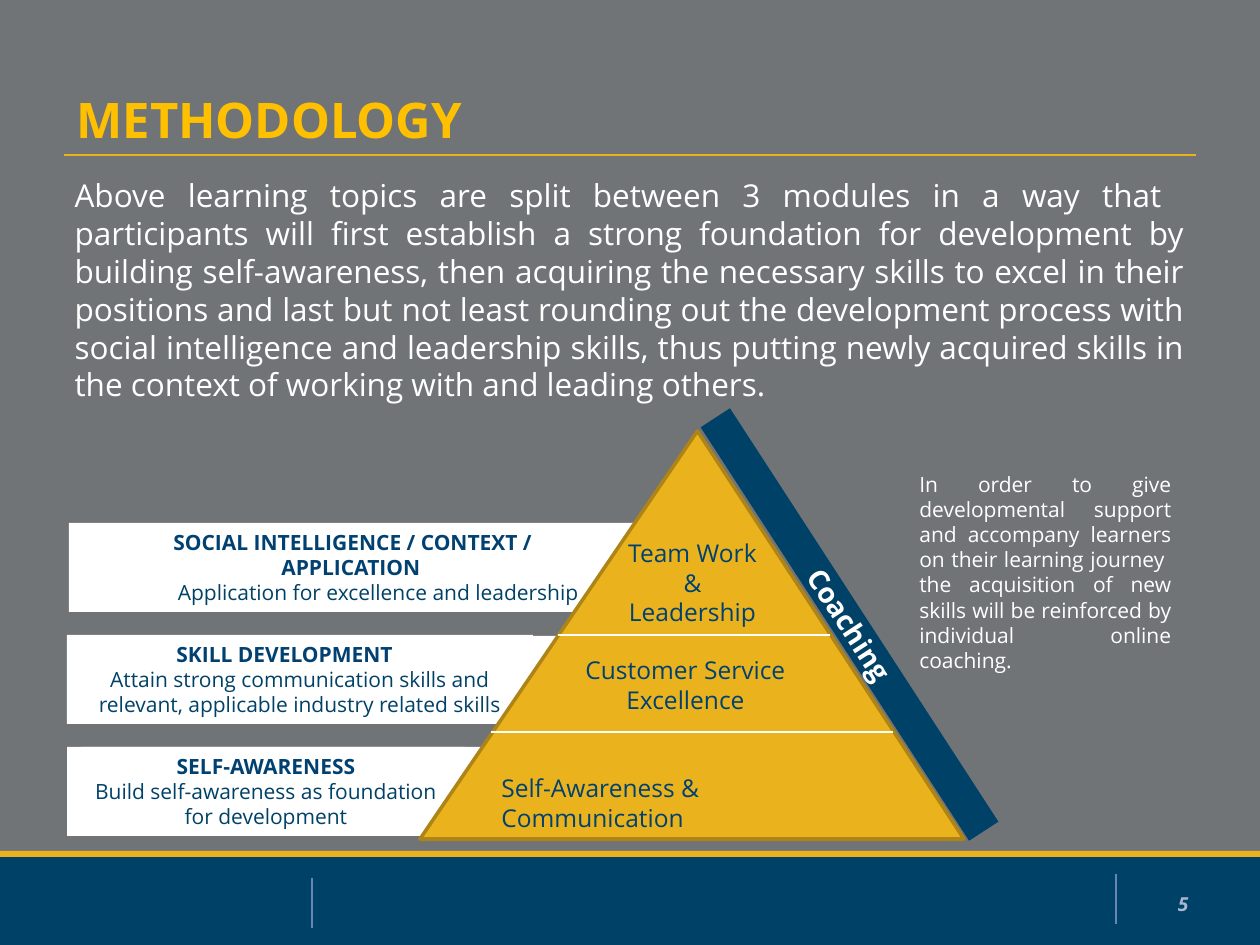
from typing import NamedTuple

from lxml import etree
from pptx import Presentation
from pptx import util as u
from pptx.dml.color import RGBColor
from pptx.enum import shapes, text
from pptx.oxml import ns

PX_PER_INCH = 126
GREY, NAVY, INK, GOLD, WHITE = "717477", "004167", "004171", "EAB31D", "FFFFFF"
AL, ANC, SHP = text.PP_ALIGN, text.MSO_ANCHOR, shapes.MSO_SHAPE


class Box(NamedTuple):
    x: int
    y: int
    w: int
    h: int


class Para(NamedTuple):
    text: str
    size: int
    color: str
    bold: bool = False
    align: AL = AL.LEFT
    indent: int = 0
    italic: bool = False


class Label(NamedTuple):
    box: Box
    paras: list


class Line(NamedTuple):
    x1: int
    y1: int
    x2: int
    y2: int
    color: str


def px(n: int) -> u.Emu:
    return u.Emu(round(n * 914400 / PX_PER_INCH))


def rgb(value: str) -> RGBColor:
    return RGBColor.from_string(value)


def write(sp, paras: list, anchor=ANC.TOP) -> None:
    tf = sp.text_frame
    frame = {"word_wrap": True, "auto_size": text.MSO_AUTO_SIZE.NONE,
             "vertical_anchor": anchor}
    for name, value in frame.items():
        setattr(tf, name, value)
    for i, para in enumerate(paras):
        p = tf.add_paragraph() if i else tf.paragraphs[0]
        pPr = p._p.get_or_add_pPr()
        pPr.set("marL", str(px(para.indent)))
        pPr.set("indent", "0")
        etree.SubElement(pPr, ns.qn("a:buNone"))
        p.alignment, p.space_before = para.align, u.Pt(0)
        r = p.add_run()
        r.text = para.text
        fmt = {"name": "Open Sans", "size": u.Pt(para.size),
               "bold": para.bold, "italic": para.italic}
        for name, value in fmt.items():
            setattr(r.font, name, value)
        r.font.color.rgb = rgb(para.color)


def place(sp, box: Box) -> None:
    for name, value in zip(("left", "top", "width", "height"), box):
        setattr(sp, name, px(value))


def add_shape(s, box: Box, fill: str, kind=SHP.RECTANGLE):
    sp = s.shapes.add_shape(kind, *map(px, box))
    sp.shadow.inherit = False
    sp.fill.solid()
    sp.fill.fore_color.rgb = rgb(fill)
    sp.line.fill.background()
    return sp


def add_text(s, box: Box, paras: list, anchor=ANC.TOP) -> None:
    write(s.shapes.add_textbox(*map(px, box)), paras, anchor)


def add_line(s, line: Line) -> None:
    cx = s.shapes.add_connector(shapes.MSO_CONNECTOR.STRAIGHT, *map(px, line[:4]))
    cx.line.color.rgb = rgb(line.color)
    cx.line.width = u.Pt(0.75)
    etree.SubElement(cx._element.spPr, ns.qn("a:effectLst"))


def heading(words: str, align=AL.LEFT, indent: int = 0) -> Para:
    return Para(words, 12, INK, True, align, indent)


def detail(words: str) -> Para:
    return Para(words, 12, NAVY, align=AL.CENTER)


def level(words: str, align=AL.CENTER) -> Para:
    return Para(words, 14, INK, align=align)


BODY = ("Above learning topics are split between 3 modules in a way that  participants "
        "will first establish a strong foundation for development by building "
        "self-awareness, then acquiring the necessary skills to excel in their positions "
        "and last but not least rounding out the development process with social "
        "intelligence and leadership skills, thus putting newly acquired skills in the "
        "context of working with and leading others.")
SUPPORT = ("In order to give developmental support and accompany learners on their "
           "learning journey  the acquisition of new skills will be reinforced by "
           "individual online coaching.")

FRAME_LINES = [
    Line(312, 878, 312, 928, "6A85B2"),
    Line(1116, 874, 1116, 924, "6A85B2"),
    Line(64, 155, 1196, 155, GOLD),
]
LABEL_BACKS = [Box(81, 747, 466, 38), Box(96, 636, 466, 38)]
LABELS = [
    Label(Box(67, 635, 466, 89), [
        heading("SKILL DEVELOPMENT", indent=97),
        detail("Attain strong communication skills and relevant, "
               "applicable industry related skills")]),
    Label(Box(67, 747, 398, 89), [
        heading("SELF-AWARENESS", AL.CENTER),
        detail("Build self-awareness as foundation for development")]),
    Label(Box(69, 523, 619, 89), [
        heading("SOCIAL INTELLIGENCE / CONTEXT /", indent=92),
        heading("APPLICATION", indent=200),
        detail("Application for excellence and leadership")]),
]
LEVELS = [
    Label(Box(499, 532, 387, 102),
          [level("Team Work"), level("&"), level("Leadership")]),
    Label(Box(548, 649, 275, 72),
          [level("Customer Service"), level("Excellence")]),
    Label(Box(489, 767, 390, 72),
          [level("Self-Awareness & Communication", AL.LEFT)]),
]
LEVEL_LINES = [Line(558, 635, 830, 635, WHITE), Line(491, 732, 893, 732, WHITE)]


def main() -> None:
    prs = Presentation()
    prs.slide_width, prs.slide_height = px(1260), px(945)
    s = prs.slides.add_slide(prs.slide_layouts[1])
    s.background.fill.solid()
    s.background.fill.fore_color.rgb = rgb(GREY)

    # Footer band and rules
    add_shape(s, Box(0, 857, 1260, 88), NAVY)
    add_shape(s, Box(0, 851, 1260, 6), GOLD)
    for line in FRAME_LINES:
        add_line(s, line)
    add_text(s, Box(1148, 885, 53, 37),
             [Para("5", 11, "A8B8D2", True, AL.RIGHT, italic=True)], ANC.MIDDLE)

    # Title and introduction
    title, body = s.placeholders
    place(title, Box(64, 26, 1134, 129))
    write(title, [Para("METHODOLOGY", 28, "FFC000", True)], ANC.BOTTOM)
    place(body, Box(62, 170, 1135, 242))
    write(body, [Para(BODY, 18, WHITE, align=AL.JUSTIFY)])

    # Labels left of the pyramid
    for box in LABEL_BACKS:
        add_shape(s, box, WHITE)
    for label in LABELS:
        write(add_shape(s, label.box, WHITE), label.paras)

    # Coaching bar and its explanation
    add_text(s, Box(907, 465, 277, 190), [Para(SUPPORT, 12, WHITE, align=AL.JUSTIFY)])
    bar = add_shape(s, Box(832, 378, 35, 493), NAVY)
    bar.rotation = 147
    write(bar, [Para("Coaching", 16, WHITE, True, AL.CENTER)], ANC.MIDDLE)
    bar.text_frame._txBody.bodyPr.set("vert", "vert270")

    # Pyramid with its three levels
    pyramid = add_shape(s, Box(420, 431, 544, 408), GOLD, SHP.ISOSCELES_TRIANGLE)
    pyramid.adjustments[0] = 0.51
    pyramid.line.color.rgb = rgb("AD8415")
    pyramid.line.width = u.Pt(2)
    for label in LEVELS:
        add_text(s, label.box, label.paras)
    for line in LEVEL_LINES:
        add_line(s, line)

    prs.save("out.pptx")


if __name__ == "__main__":
    main()
